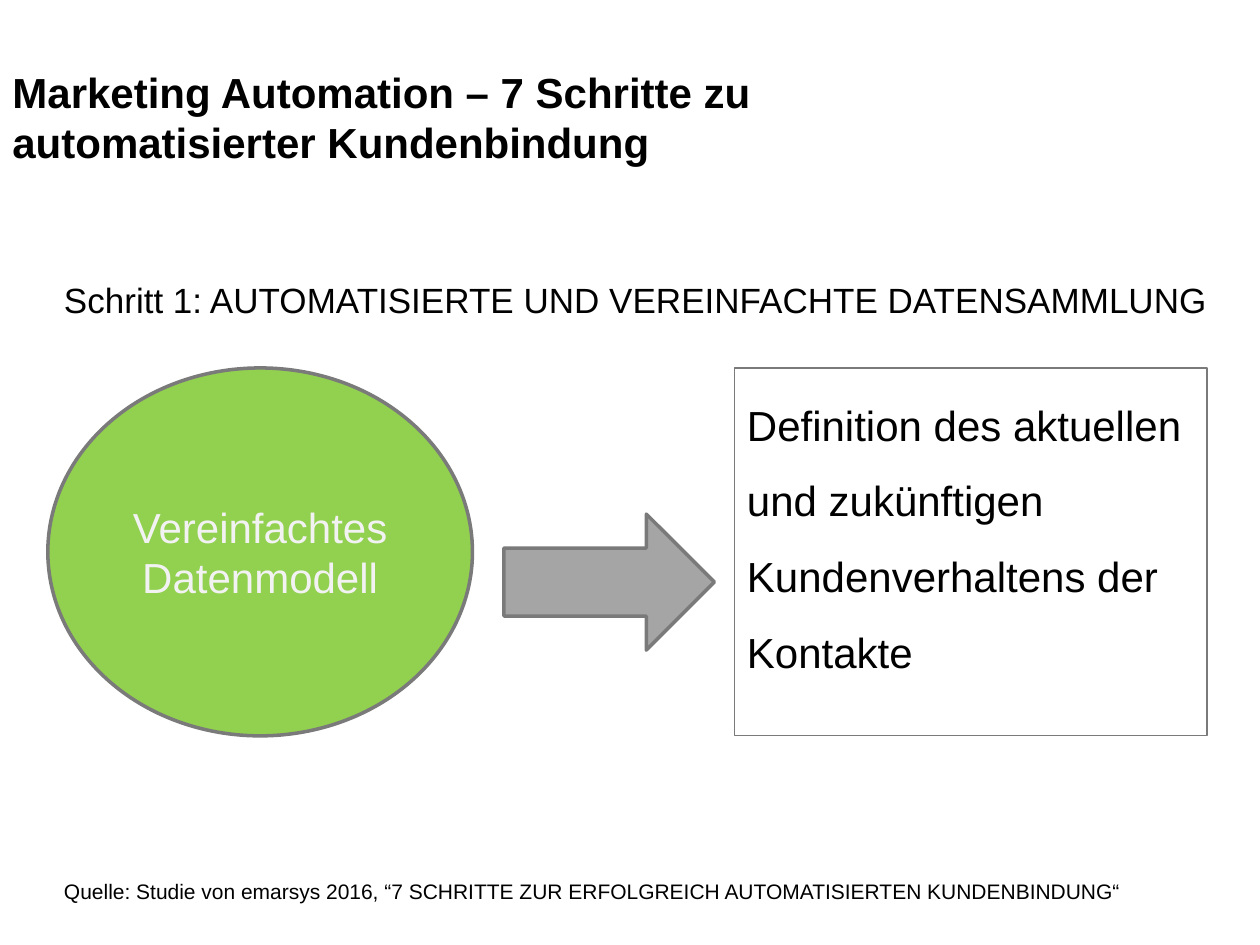
from pptx import Presentation
from pptx.dml.color import RGBColor
from pptx.enum import shapes, text
from pptx.util import Inches, Pt

FONT = "Arial"
BLACK, PALE, GREEN, GREY, OUTLINE = "000000", "F2F2F2", "92D050", "A5A5A5", "7A7A7A"
ROW_TOP, ROW_HEIGHT = 2.92, 2.92


def color(hex_value):
    return RGBColor.from_string(hex_value)


def write(shape, wording, size, ink=BLACK, bold=False, spacing=None, wrap=True,
          align=text.PP_ALIGN.LEFT, anchor=text.MSO_ANCHOR.TOP):
    frame = shape.text_frame
    frame.word_wrap = wrap
    frame.vertical_anchor = anchor
    para = frame.paragraphs[0]
    para.text = wording
    para.alignment = align
    if spacing:
        para.line_spacing = spacing
    para.font.name = FONT
    para.font.size = Pt(size)
    para.font.bold = bold
    para.font.color.rgb = color(ink)


def add_text(page, box, wording, size, **style):
    write(page.shapes.add_textbox(*map(Inches, box)), wording, size, **style)


def add_outlined(page, kind, box, fill=None, width=2):
    shape = page.shapes.add_shape(kind, *map(Inches, box))
    shape.shadow.inherit = False
    if fill:
        shape.fill.solid()
        shape.fill.fore_color.rgb = color(fill)
    else:
        shape.fill.background()
    shape.line.color.rgb = color(OUTLINE)
    shape.line.width = Pt(width)
    return shape


def add_headings(page):
    add_text(page, (0, 0.47, 6.81, 0.91),
             "Marketing Automation – 7 Schritte zu automatisierter Kundenbindung",
             24, bold=True, anchor=text.MSO_ANCHOR.MIDDLE)
    add_text(page, (0.41, 1.83, 9.33, 0.67),
             "Schritt 1: AUTOMATISIERTE UND VEREINFACHTE DATENSAMMLUNG",
             20, spacing=2.0)


def add_process(page, left, top, height):
    """Draw the data model, the arrow and the definition from left to right."""
    kinds = shapes.MSO_SHAPE
    model = add_outlined(page, kinds.OVAL, (left, top, 3.37, height), GREEN)
    write(model, "Vereinfachtes Datenmodell", 24, ink=PALE,
          align=text.PP_ALIGN.CENTER, anchor=text.MSO_ANCHOR.MIDDLE)
    add_outlined(page, kinds.RIGHT_ARROW, (left + 3.62, top + 1.16, 1.67, 1.08), GREY)
    definition = add_outlined(page, kinds.RECTANGLE,
                              (left + 5.45, top, 3.75, height), width=0.75)
    write(definition,
          "Definition des aktuellen und zukünftigen Kundenverhaltens der Kontakte",
          24, spacing=1.5)


def add_source(page):
    add_text(page, (0.41, 6.92, 8.67, 0.3),
             "Quelle: Studie von emarsys 2016, “7 SCHRITTE ZUR ERFOLGREICH "
             "AUTOMATISIERTEN KUNDENBINDUNG“", 12, wrap=False)


def main():
    deck = Presentation()
    deck.slide_width, deck.slide_height = Inches(10), Inches(7.5)
    page = deck.slides.add_slide(deck.slide_layouts[6])
    add_headings(page)
    add_source(page)
    add_process(page, 0.38, ROW_TOP, ROW_HEIGHT)
    deck.save("out.pptx")


if __name__ == "__main__":
    main()
